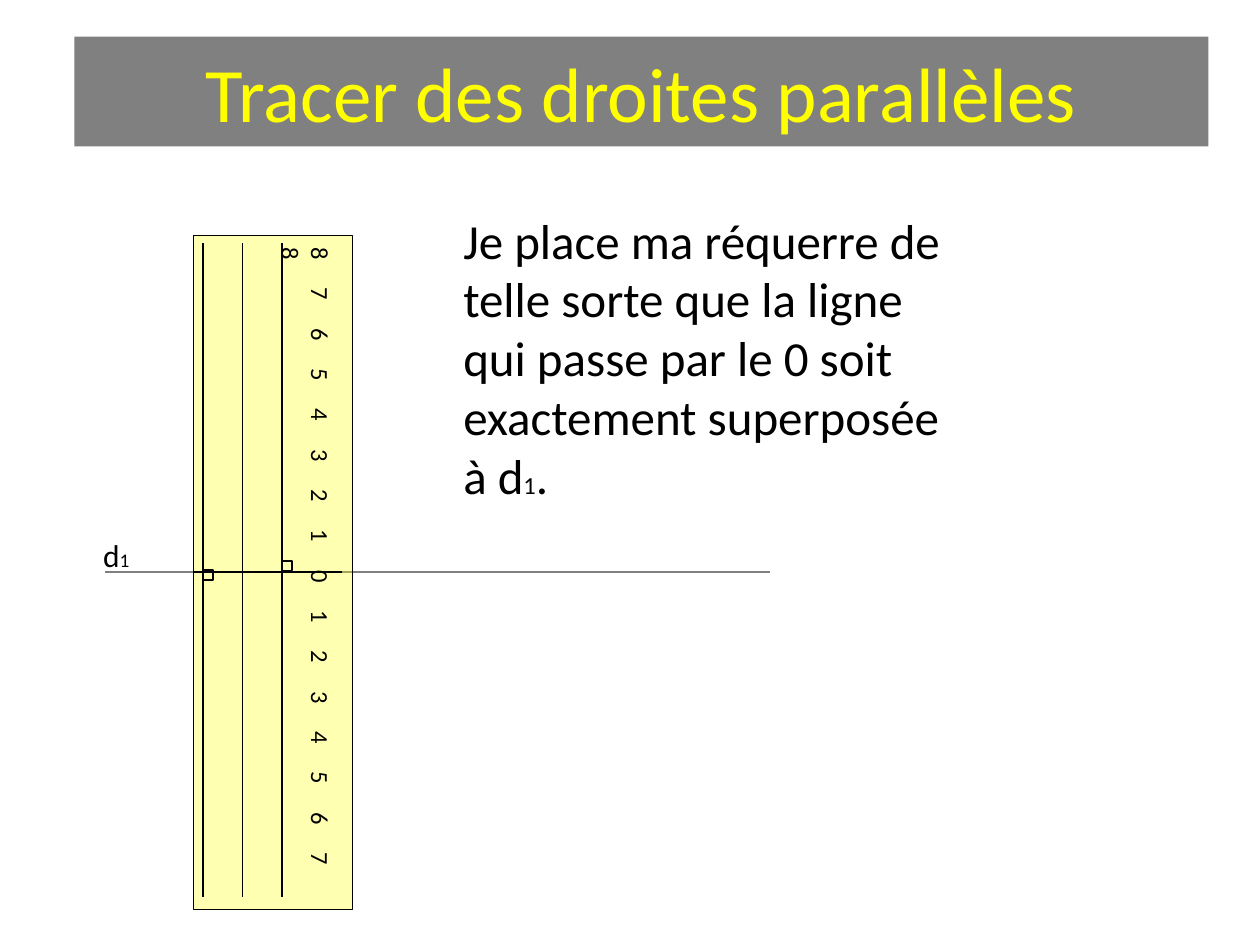
import pptx
import pptx.dml.color
import pptx.enum.shapes
import pptx.enum.text
import pptx.oxml
import pptx.oxml.ns
import pptx.util
from pptx.util import Cm

GREY = pptx.dml.color.RGBColor(0x80, 0x80, 0x80)
YELLOW = pptx.dml.color.RGBColor(0xFF, 0xFF, 0x00)
BLACK = pptx.dml.color.RGBColor(0x00, 0x00, 0x00)
FONT = "Calibri"
RECTANGLE = pptx.enum.shapes.MSO_SHAPE.RECTANGLE
GRADUATIONS = [*range(8, 0, -1), *range(0, 9)]


def add_element(parent, tag, **attributes):
    element = pptx.oxml.parse_xml(f"<a:{tag} {pptx.oxml.ns.nsdecls('a')}/>")
    for name, value in attributes.items():
        element.set(name, str(value))
    parent.append(element)
    return element


def add_spans(para, spans, color=BLACK):
    for text, size in spans:
        span = para.add_run()
        span.text = text
        span.font.name = FONT
        span.font.size = pptx.util.Pt(size)
        span.font.color.rgb = color


def add_text(shapes, left, top, width, height, spans):
    box = shapes.add_textbox(Cm(left), Cm(top), Cm(width), Cm(height))
    box.text_frame.word_wrap = True
    add_spans(box.text_frame.paragraphs[0], spans)
    return box


def add_line(shapes, x1, y1, x2, y2, color=BLACK, weight=1):
    line = shapes.add_connector(
        pptx.enum.shapes.MSO_CONNECTOR.STRAIGHT, Cm(x1), Cm(y1), Cm(x2), Cm(y2))
    line.line.color.rgb = color
    line.line.width = pptx.util.Pt(weight)
    add_element(line._element.spPr, "effectLst")


def add_rectangle(shapes, left, top, width, height, weight):
    box = shapes.add_shape(RECTANGLE, Cm(left), Cm(top), Cm(width), Cm(height))
    box.shadow.inherit = False
    box.fill.background()
    box.line.color.rgb = BLACK
    box.line.width = pptx.util.Pt(weight)
    return box


def place_title(page, left, top, width, height):
    title = page.shapes.title
    title.left, title.top = Cm(left), Cm(top)
    title.width, title.height = Cm(width), Cm(height)
    title.fill.solid()
    title.fill.fore_color.rgb = GREY
    title.text_frame.vertical_anchor = pptx.enum.text.MSO_ANCHOR.MIDDLE
    para = title.text_frame.paragraphs[0]
    para.alignment = pptx.enum.text.PP_ALIGN.CENTER
    add_spans(para, [("Tracer des droites parallèles", 44)], YELLOW)


def draw_line_d1(page, left, top, width):
    add_line(page.shapes, left, top, left + width, top, GREY, 1.5)
    add_text(page.shapes, left - 0.28, top - 0.84, 1.57, 1.02, [("d", 18), ("1", 11)])


def draw_set_square(page, left, top, width, height):
    shapes = page.shapes.add_group_shape().shapes
    middle = top + height / 2

    # Translucent body
    body = add_rectangle(shapes, left, top, width, height, 0.25)
    body.fill.solid()
    body.fill.fore_color.rgb = YELLOW
    color = body._element.spPr.find(".//" + pptx.oxml.ns.qn("a:srgbClr"))
    add_element(color, "alpha", val=30000)

    # Graduations, one tab stop apart, on a strip turned along the body
    strip, step = 0.86, 0.813
    center = left + 2.56
    scale = add_text(shapes, center - height / 2, middle - strip / 2, height, strip,
                     [("\t".join(map(str, GRADUATIONS)), 14)])
    scale.rotation = 90
    properties = scale.text_frame.paragraphs[0]._p.get_or_add_pPr()
    stops = add_element(properties, "tabLst")
    for number in range(1, len(GRADUATIONS)):
        add_element(stops, "tab", pos=int(Cm(step * number)), algn="l")

    # Zero line and the three lines along the body
    add_line(shapes, left + width - 0.2, middle, left, middle)
    guides = [left + 0.19 + 0.8 * number for number in range(3)]
    for x in reversed(guides):
        add_line(shapes, x, top + 0.16, x, top + height - 0.25)

    # Right-angle marks
    for x, y in ((guides[2], middle - 0.23), (guides[0], middle - 0.04)):
        add_rectangle(shapes, x, y, 0.2, 0.2, 1)


def place_instruction(page, left, top, width, height):
    add_text(page.shapes, left, top, width, height, [
        ("Je place ma réquerre de telle sorte que la ligne qui passe par le 0 "
         "soit exactement superposée à d", 28),
        ("1", 14),
        (".", 28),
    ])


def main():
    deck = pptx.Presentation()
    deck.slide_width, deck.slide_height = Cm(25.4), Cm(19.05)
    page = deck.slides.add_slide(deck.slide_layouts[5])
    place_title(page, 1.5, 0.74, 22.86, 2.21)
    draw_line_d1(page, 2.11, 11.53, 13.41)
    draw_set_square(page, 3.9, 4.74, 3.2, 13.59)
    place_instruction(page, 9.09, 4.11, 10.21, 6.25)
    deck.save("out.pptx")


if __name__ == "__main__":
    main()
